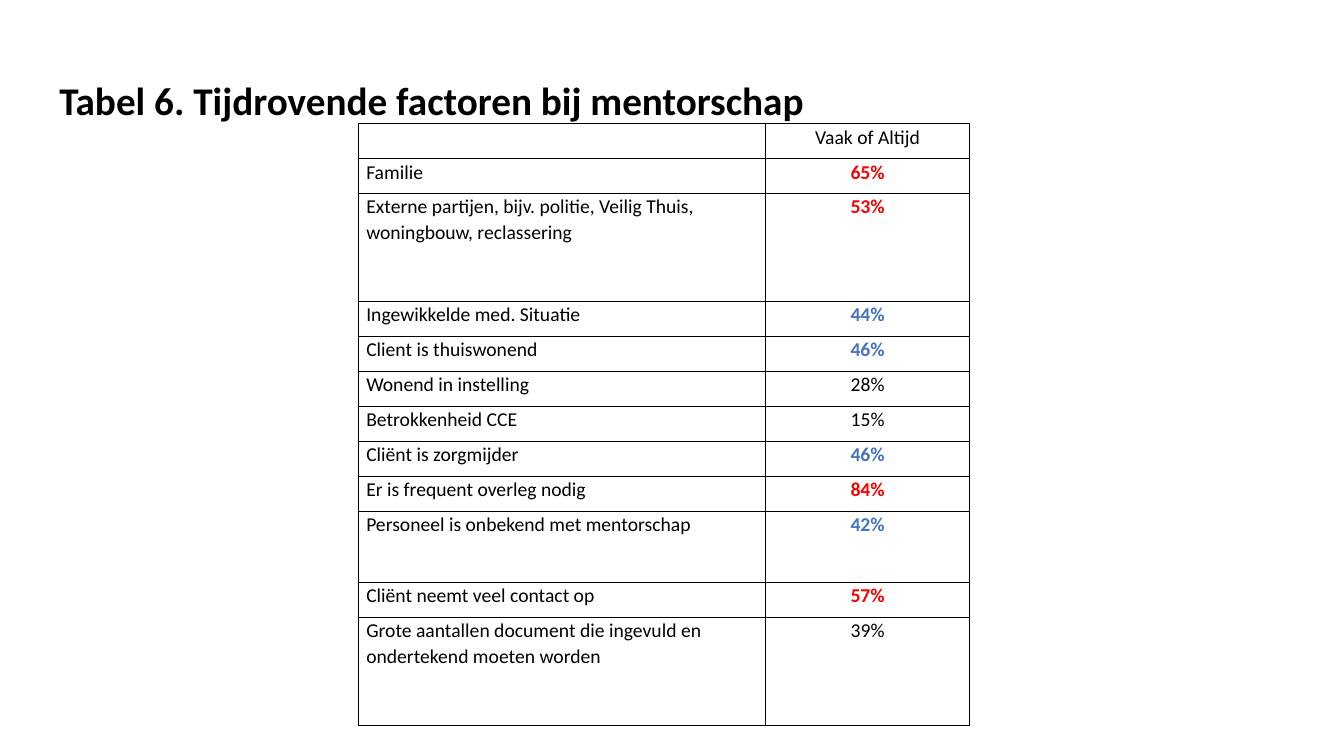
from lxml.etree import SubElement
from pptx import Presentation
from pptx.dml.color import RGBColor
from pptx.enum.text import MSO_ANCHOR, PP_ALIGN
from pptx.oxml.ns import qn
from pptx.util import Cm, Pt

BLACK = RGBColor(0x00, 0x00, 0x00)
RED = RGBColor(0xFF, 0x00, 0x00)
BLUE = RGBColor(0x44, 0x72, 0xC4)
FONT = "Calibri"
NORMAL, MEDIUM, TALL = 0.88, 1.8, 2.72

FACTORS = [
    ("", "Vaak of Altijd", BLACK, NORMAL),
    ("Familie", "65%", RED, NORMAL),
    ("Externe partijen, bijv. politie, Veilig Thuis, woningbouw, reclassering", "53%", RED, TALL),
    ("Ingewikkelde med. Situatie", "44%", BLUE, NORMAL),
    ("Client is thuiswonend", "46%", BLUE, NORMAL),
    ("Wonend in instelling", "28%", BLACK, NORMAL),
    ("Betrokkenheid CCE", "15%", BLACK, NORMAL),
    ("Cliënt is zorgmijder", "46%", BLUE, NORMAL),
    ("Er is frequent overleg nodig", "84%", RED, NORMAL),
    ("Personeel is onbekend met mentorschap", "42%", BLUE, MEDIUM),
    ("Cliënt neemt veel contact op", "57%", RED, NORMAL),
    ("Grote aantallen document die ingevuld en ondertekend moeten worden", "39%", BLACK, TALL),
]


def format_runs(p, size, color, bold):
    """Apply the font settings to every run of a paragraph."""
    for r in p.runs:
        r.font.name = FONT
        r.font.size = Pt(size)
        r.font.color.rgb = color
        r.font.bold = bold


def set_title(slide, text):
    """Place and format the slide title."""
    sp = slide.shapes.title
    sp.left, sp.top, sp.width, sp.height = Cm(1.24), Cm(1.8), Cm(30.07), Cm(2.64)
    tf = sp.text_frame
    tf.text = text
    tf.word_wrap = True
    tf.vertical_anchor = MSO_ANCHOR.TOP
    p = tf.paragraphs[0]
    p.alignment = PP_ALIGN.LEFT
    format_runs(p, 28, BLACK, True)


def set_borders(cell):
    """Draw a thin black line on all four sides of a cell."""
    tcPr = cell._tc.get_or_add_tcPr()
    for side in ("a:lnL", "a:lnR", "a:lnT", "a:lnB"):
        ln = SubElement(tcPr, qn(side), w=str(Pt(1)))
        fill = SubElement(ln, qn("a:solidFill"))
        SubElement(fill, qn("a:srgbClr"), val=str(BLACK))


def fill_cell(cell, text, align, color):
    """Write one table cell; coloured values are bold."""
    set_borders(cell)
    cell.fill.background()
    cell.margin_left = cell.margin_right = Cm(0.19)
    cell.margin_top = cell.margin_bottom = Cm(0)
    p = cell.text_frame.paragraphs[0]
    p.text = text
    p.alignment = align
    p.line_spacing = 1.07
    p.space_after = Pt(8)
    format_runs(p, 14, color, color != BLACK)


def add_factor_table(slide):
    """Add the table of factors and their shares."""
    height = Cm(sum(factor[3] for factor in FACTORS))
    frame = slide.shapes.add_table(len(FACTORS), 2, Cm(9.04), Cm(3.12), Cm(15.39), height)
    table = frame.table
    table.first_row = table.horz_banding = False
    table.columns[0].width, table.columns[1].width = Cm(10.26), Cm(5.13)
    for i, (label, share, color, row_height) in enumerate(FACTORS):
        table.rows[i].height = Cm(row_height)
        fill_cell(table.cell(i, 0), label, PP_ALIGN.LEFT, BLACK)
        fill_cell(table.cell(i, 1), share, PP_ALIGN.CENTER, color)


def main():
    """Build the slide and save it."""
    prs = Presentation()
    prs.slide_width, prs.slide_height = Cm(33.87), Cm(19.05)
    slide = prs.slides.add_slide(prs.slide_layouts[5])
    set_title(slide, "Tabel 6. Tijdrovende factoren bij mentorschap")
    add_factor_table(slide)
    prs.save("out.pptx")


if __name__ == "__main__":
    main()
